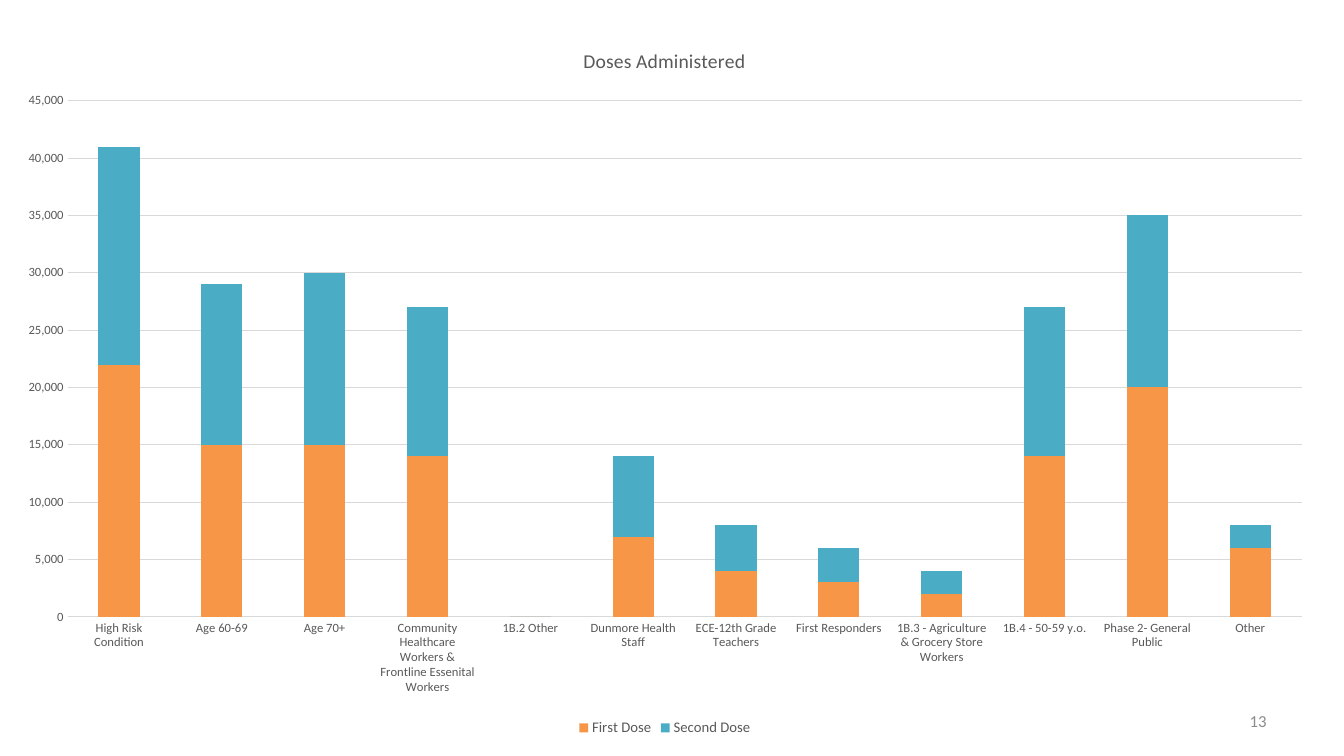
import pptx
import pptx.chart.data
import pptx.dml.color
import pptx.enum.chart
import pptx.enum.text
import pptx.oxml
import pptx.oxml.ns
import pptx.util
from pptx.util import Inches

# Content
TITLE = "Doses Administered"
PAGE_NUMBER = "13"
SERIES_NAMES = ("First Dose", "Second Dose")
DOSES = [
    ("High Risk Condition", 22000, 19000),
    ("Age 60-69", 15000, 14000),
    ("Age 70+", 15000, 15000),
    ("Community Healthcare Workers & Frontline Essenital Workers", 14000, 13000),
    ("1B.2 Other", 0, 0),
    ("Dunmore Health Staff", 7000, 7000),
    ("ECE-12th Grade Teachers", 4000, 4000),
    ("First Responders", 3000, 3000),
    ("1B.3 - Agriculture & Grocery Store Workers", 2000, 2000),
    ("1B.4 - 50-59 y.o.", 14000, 13000),
    ("Phase 2- General Public", 20000, 15000),
    ("Other", 6000, 2000),
]

# Style
FONT = "Calibri"
TEXT_GRAY = pptx.dml.color.RGBColor(0x59, 0x59, 0x59)
NUMBER_GRAY = pptx.dml.color.RGBColor(0x8C, 0x8C, 0x8C)
LINE_GRAY = pptx.dml.color.RGBColor(0xD9, 0xD9, 0xD9)
ORANGE = pptx.dml.color.RGBColor(0xF7, 0x96, 0x46)
TEAL = pptx.dml.color.RGBColor(0x4B, 0xAC, 0xC6)

# Positions in inches: left, top, width, height
CHART_BOX = (0.02, 0.25, 13.15, 7.1)
PLOT_BOX = (0.67, 1.0, 12.24, 5.12)
TITLE_CORNER = (5.73, 0.18)
NUMBER_BOX = (9.55, 6.95, 3.11, 0.4)


def style_font(font, size, color=TEXT_GRAY):
    font.name = FONT
    font.size = pptx.util.Pt(size)
    font.bold = False
    font.color.rgb = color


def style_line(line):
    line.color.rgb = LINE_GRAY
    line.width = pptx.util.Pt(0.75)


def add_text(page, text, *, box, size, color, align):
    shape = page.shapes.add_textbox(*map(Inches, box))
    frame = shape.text_frame
    frame.word_wrap = True
    frame.vertical_anchor = pptx.enum.text.MSO_ANCHOR.MIDDLE
    para = frame.paragraphs[0]
    para.alignment = align
    span = para.add_run()
    span.text = text
    style_font(span.font, size, color)


def place_in_chart(element, before, corner, extent=(), inner=False):
    """Set a manual layout, given in inches on the chart, ahead of one of the children."""
    left, top, width, height = CHART_BOX
    parts = [("layoutTarget", "inner")] if inner else []
    parts += [("xMode", "edge"), ("yMode", "edge")]
    parts += [(name, length / whole) for name, length, whole
              in zip("xywh", (*corner, *extent), (width, height) * 2)]
    body = "".join(f'<c:{name} val="{value}"/>' for name, value in parts)
    for old in element.findall(pptx.oxml.ns.qn("c:layout")):
        element.remove(old)
    layout = pptx.oxml.parse_xml(
        f'<c:layout {pptx.oxml.ns.nsdecls("c")}><c:manualLayout>{body}'
        "</c:manualLayout></c:layout>")
    element.find(pptx.oxml.ns.qn(before)).addprevious(layout)


def add_dose_chart(page):
    data = pptx.chart.data.CategoryChartData(number_format="#,##0")
    groups, *columns = zip(*DOSES)
    data.categories = groups
    for name, values in zip(SERIES_NAMES, columns):
        data.add_series(name, values)
    chart = page.shapes.add_chart(
        pptx.enum.chart.XL_CHART_TYPE.COLUMN_STACKED, *map(Inches, CHART_BOX), data).chart
    style_font(chart.font, 10)

    # Title
    chart.has_title = True
    title_frame = chart.chart_title.text_frame
    title_frame.text = TITLE
    style_font(title_frame.paragraphs[0].runs[0].font, 14)
    chart.chart_title.include_in_layout = False
    place_in_chart(chart.chart_title._element, "c:overlay", TITLE_CORNER)

    # Columns
    plot = chart.plots[0]
    plot.gap_width = 150
    plot.overlap = 100
    plot.vary_by_categories = False
    for series, color in zip(plot.series, (ORANGE, TEAL)):
        series.format.fill.solid()
        series.format.fill.fore_color.rgb = color
    plot_area = chart._chartSpace.chart.plotArea
    place_in_chart(plot_area, "c:barChart",
                   (PLOT_BOX[0] - CHART_BOX[0], PLOT_BOX[1] - CHART_BOX[1]),
                   PLOT_BOX[2:], inner=True)

    # Axes
    for axis in (chart.category_axis, chart.value_axis):
        axis.major_tick_mark = pptx.enum.chart.XL_TICK_MARK.NONE
        axis.minor_tick_mark = pptx.enum.chart.XL_TICK_MARK.NONE
        style_font(axis.tick_labels.font, 9)
    style_line(chart.category_axis.format.line)
    values = chart.value_axis
    values.minimum_scale, values.maximum_scale, values.major_unit = 0, 45000, 5000
    values.tick_labels.number_format = "#,##0"
    values.tick_labels.number_format_is_linked = False
    values.format.line.fill.background()
    values.has_major_gridlines = True
    style_line(values.major_gridlines.format.line)

    # Legend
    chart.has_legend = True
    chart.legend.position = pptx.enum.chart.XL_LEGEND_POSITION.BOTTOM
    chart.legend.include_in_layout = False
    style_font(chart.legend.font, 10.5)


def main():
    deck = pptx.Presentation()
    deck.slide_width, deck.slide_height = Inches(13.33), Inches(7.5)
    page = deck.slides.add_slide(deck.slide_layouts[6])
    add_text(page, PAGE_NUMBER, box=NUMBER_BOX, size=12, color=NUMBER_GRAY,
             align=pptx.enum.text.PP_ALIGN.RIGHT)
    add_dose_chart(page)
    deck.save("out.pptx")


if __name__ == "__main__":
    main()
